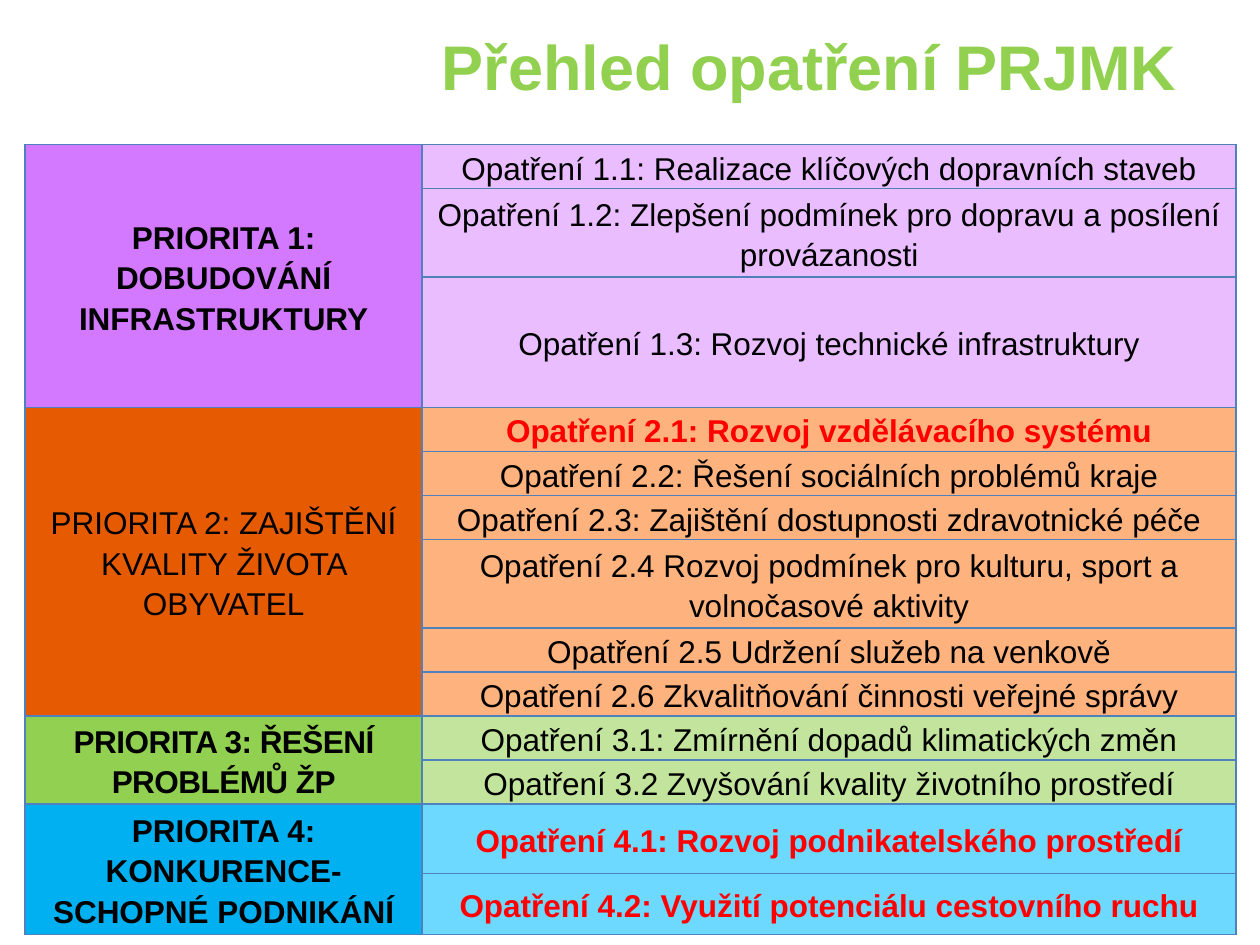
import pptx
import pptx.util
import pptx.dml.color
import pptx.enum.text
import pptx.oxml
from pptx.oxml.ns import nsdecls

COLORS = {
    "title": "92D050", "text": "000000", "accent": "FF0000", "border": "4F81BD",
    "purple": "D279FF", "purple_light": "E9BDFF",
    "orange": "E65B01", "orange_light": "FEB27E",
    "green": "92D051", "green_light": "C2E49C",
    "blue": "00B0F1", "blue_light": "6DD9FF",
}
BODY = {"name": "Arial", "size": pptx.util.Pt(18), "bold": False}
BOLD = {**BODY, "bold": True}
TITLE = {**BOLD, "size": pptx.util.Pt(36)}

# Each priority: text, colour, format, letter spacing, measures (text, row height, accented)
PRIORITIES = [
    ("PRIORITA 1: DOBUDOVÁNÍ INFRASTRUKTURY", "purple", BOLD, 0, [
        ("Opatření 1.1: Realizace klíčových dopravních staveb", 0.35, False),
        ("Opatření 1.2: Zlepšení podmínek pro dopravu a posílení provázanosti", 0.7, False),
        ("Opatření 1.3: Rozvoj technické infrastruktury", 0.97, False),
    ]),
    ("PRIORITA 2: ZAJIŠTĚNÍ KVALITY ŽIVOTA OBYVATEL", "orange", BODY, 0, [
        ("Opatření 2.1: Rozvoj vzdělávacího systému", 0.35, True),
        ("Opatření 2.2: Řešení sociálních problémů kraje", 0.35, False),
        ("Opatření 2.3: Zajištění dostupnosti zdravotnické péče", 0.35, False),
        ("Opatření 2.4 Rozvoj podmínek pro kulturu, sport a volnočasové aktivity", 0.7, False),
        ("Opatření 2.5 Udržení služeb na venkově", 0.35, False),
        ("Opatření 2.6 Zkvalitňování činnosti veřejné správy", 0.35, False),
    ]),
    ("PRIORITA 3: ŘEŠENÍ PROBLÉMŮ ŽP", "green", BOLD, -30, [
        ("Opatření 3.1: Zmírnění dopadů klimatických změn", 0.35, False),
        ("Opatření 3.2 Zvyšování kvality životního prostředí", 0.35, False),
    ]),
    ("PRIORITA 4: KONKURENCE-SCHOPNÉ PODNIKÁNÍ", "blue", BOLD, 0, [
        ("Opatření 4.1: Rozvoj podnikatelského prostředí", 0.55, True),
        ("Opatření 4.2: Využití potenciálu cestovního ruchu", 0.42, True),
    ]),
]


def rgb(color):
    return pptx.dml.color.RGBColor.from_string(COLORS[color])


class SlideBuilder:
    """Holds the style and the current slide; lengths are shares of the slide."""

    def __init__(self, prs):
        self.w, self.h = prs.slide_width, prs.slide_height
        self.s = prs.slides.add_slide(prs.slide_layouts[6])

    def box(self, x, y, w, h):
        return int(x * self.w), int(y * self.h), int(w * self.w), int(h * self.h)

    def add_text(self, tf, text, fmt, color, spacing=0):
        tf.word_wrap = True
        p = tf.paragraphs[0]
        p.alignment = pptx.enum.text.PP_ALIGN.CENTER
        r = p.add_run()
        r.text = text
        for key, value in fmt.items():
            setattr(r.font, key, value)
        r.font.color.rgb = rgb(color)
        if spacing:
            r.font._element.set("spc", str(spacing))
        return p

    def title(self, text, *share):
        tf = self.s.shapes.add_textbox(*self.box(*share)).text_frame
        tf.vertical_anchor = pptx.enum.text.MSO_ANCHOR.MIDDLE
        self.add_text(tf, text, TITLE, "title")

    def style_cell(self, cell, fill):
        margin = pptx.util.Inches(0.05)
        frame = {"margin_left": margin, "margin_right": margin,
                 "margin_top": 0, "margin_bottom": 0,
                 "vertical_anchor": pptx.enum.text.MSO_ANCHOR.MIDDLE}
        for key, value in frame.items():
            setattr(cell, key, value)
        cell.fill.solid()
        cell.fill.fore_color.rgb = rgb(fill)
        tcPr = cell._tc.get_or_add_tcPr()
        for i, side in enumerate("LRTB"):
            tcPr.insert(i, pptx.oxml.parse_xml(
                f'<a:ln{side} {nsdecls("a")} w="12700"><a:solidFill>'
                f'<a:srgbClr val="{COLORS["border"]}"/></a:solidFill></a:ln{side}>'))

    def cell_text(self, cell, text, fmt, color="text", spacing=0):
        p = self.add_text(cell.text_frame, text, fmt, color, spacing)
        p.line_spacing = 1.15
        p.space_after = pptx.util.Pt(1)

    def priority_table(self, priorities, x, y, col_widths):
        heights = [h for *_, measures in priorities for _, h, _ in measures]
        share = x, y, sum(col_widths), pptx.util.Inches(sum(heights)) / self.h
        table = self.s.shapes.add_table(len(heights), 2, *self.box(*share)).table
        table.first_row = table.horz_banding = False
        for col, width in zip(table.columns, col_widths):
            col.width = int(width * self.w)
        for row, height in zip(table.rows, heights):
            row.height = pptx.util.Inches(height)

        top = 0
        for text, fill, fmt, spacing, measures in priorities:
            for i, (measure, _, accented) in enumerate(measures, top):
                self.style_cell(table.cell(i, 0), fill)
                self.style_cell(table.cell(i, 1), fill + "_light")
                self.cell_text(table.cell(i, 1), measure, BOLD if accented else BODY,
                               "accent" if accented else "text")
            # The priority spans all of its measures
            head = table.cell(top, 0)
            head.merge(table.cell(top + len(measures) - 1, 0))
            self.cell_text(head, text, fmt, spacing=spacing)
            top += len(measures)


def main():
    prs = pptx.Presentation()
    prs.slide_width, prs.slide_height = pptx.util.Inches(10), pptx.util.Inches(7.5)
    slide = SlideBuilder(prs)
    # Heading
    slide.title("Přehled opatření PRJMK", 0.327, 0.028, 0.631, 0.083)
    # Overview of priorities and measures
    slide.priority_table(PRIORITIES, 0.02, 0.153, (0.315, 0.646))
    prs.save("out.pptx")


if __name__ == "__main__":
    main()
